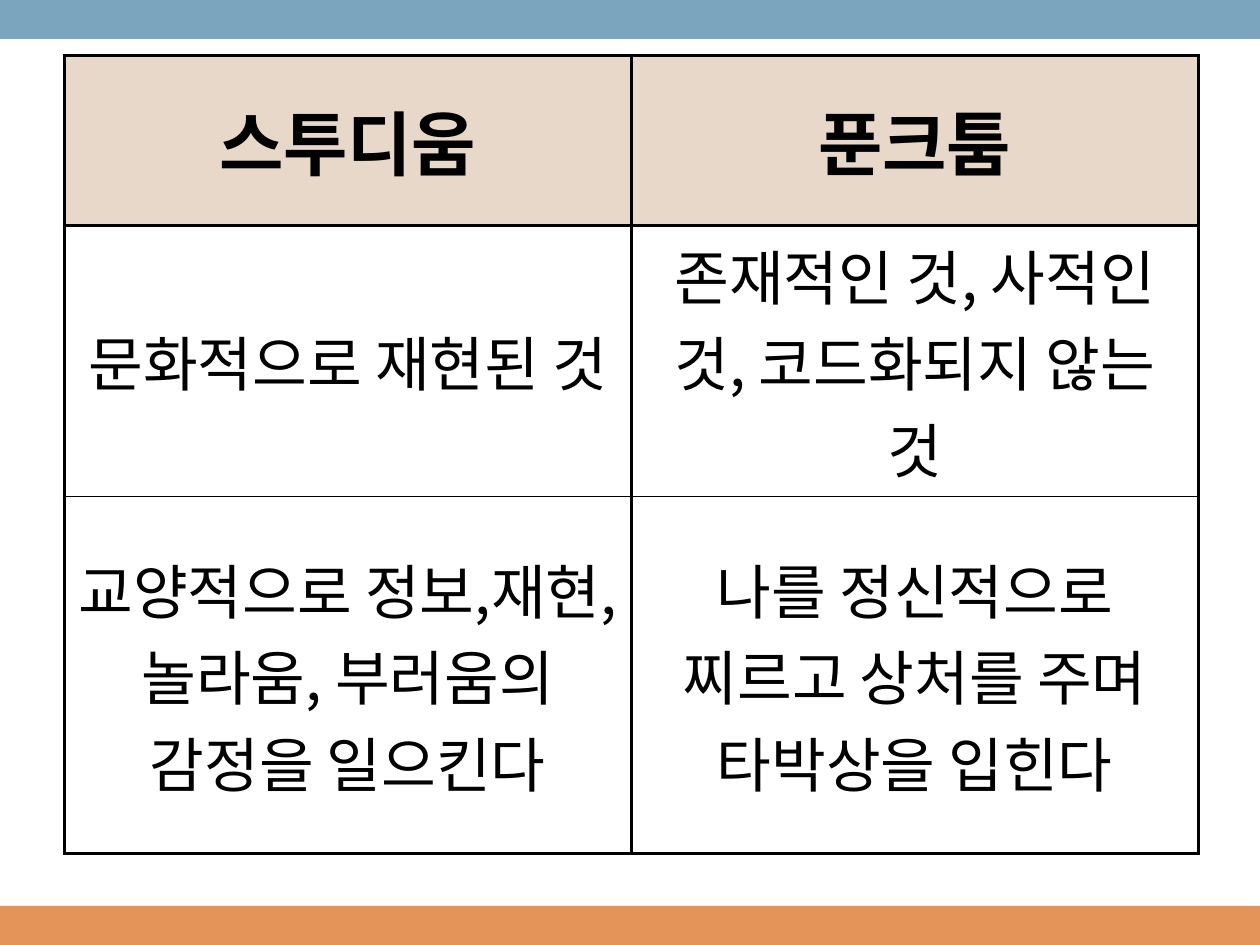
import dataclasses

import lxml.etree
import pptx
import pptx.dml.color
import pptx.enum.shapes
import pptx.enum.text
import pptx.oxml
import pptx.oxml.ns
import pptx.util

Pt = pptx.util.Pt
qn = pptx.oxml.ns.qn

COLORS = {
    "top_bar": "7BA5BE",
    "bottom_bar": "E49458",
    "header": "E8D8CA",
    "body": "FFFFFF",
    "ink": "000000",
}
FONT = "Noto Sans CJK KR"
SLIDE_WIDTH, SLIDE_HEIGHT = 720, 540
BAR_HEIGHT = 22.3
TABLE_LEFT, TABLE_TOP, TABLE_HEIGHT = 36.7, 31.7, 383.8
COLUMN_WIDTH = 324
THICK, THIN = 2.25, 1


@dataclasses.dataclass(frozen=True)
class Row:
    texts: tuple[str, str]
    height: float
    fill: str = "body"
    size: float = 34
    bold: bool = False
    top: float = THICK
    bottom: float = THICK


ROWS = (
    Row(("스투디움", "푼크툼"), 97.2, fill="header", size=40, bold=True),
    Row(("문화적으로 재현된 것", "존재적인 것, 사적인 것, 코드화되지 않는 것"),
        74.9, bottom=THIN),
    Row(("교양적으로 정보,재현,놀라움, 부러움의 감정을 일으킨다",
         "나를 정신적으로 찌르고 상처를 주며 타박상을 입힌다"),
        157, top=THIN),
)


def rgb(name: str) -> pptx.dml.color.RGBColor:
    return pptx.dml.color.RGBColor.from_string(COLORS[name])


def add_bar(slide, top: float, color: str) -> None:
    bar = slide.shapes.add_shape(
        pptx.enum.shapes.MSO_SHAPE.RECTANGLE,
        0, Pt(top), Pt(SLIDE_WIDTH), Pt(BAR_HEIGHT))
    bar.shadow.inherit = False
    bar.fill.solid()
    bar.fill.fore_color.rgb = rgb(color)
    bar.line.fill.background()


def set_borders(cell, row: Row) -> None:
    """Add the border lines; they must precede the cell fill in the XML."""
    properties = cell._tc.get_or_add_tcPr()
    widths = {"lnL": THICK, "lnR": THICK, "lnT": row.top, "lnB": row.bottom}
    for side, width in widths.items():
        line = lxml.etree.SubElement(properties, qn(f"a:{side}"), w=str(Pt(width)))
        fill = lxml.etree.SubElement(line, qn("a:solidFill"))
        lxml.etree.SubElement(fill, qn("a:srgbClr"), val=COLORS["ink"])


def style_paragraph(paragraph, row: Row) -> None:
    """Set the font, also for Korean script, and 20% space before."""
    paragraph.alignment = pptx.enum.text.PP_ALIGN.CENTER
    font = paragraph.font
    font.size = Pt(row.size)
    font.bold = row.bold
    font.color.rgb = rgb("ink")
    font.name = FONT
    lxml.etree.SubElement(font._element, qn("a:ea"), typeface=FONT)
    space_before = lxml.etree.Element(qn("a:spcBef"))
    lxml.etree.SubElement(space_before, qn("a:spcPct"), val="20000")
    paragraph._p.get_or_add_pPr().insert(0, space_before)


def fill_cell(cell, text: str, row: Row) -> None:
    set_borders(cell, row)
    cell.fill.solid()
    cell.fill.fore_color.rgb = rgb(row.fill)
    cell.vertical_anchor = pptx.enum.text.MSO_ANCHOR.MIDDLE
    cell.text = text
    style_paragraph(cell.text_frame.paragraphs[0], row)


def add_comparison(slide) -> None:
    frame = slide.shapes.add_table(
        len(ROWS), 2, Pt(TABLE_LEFT), Pt(TABLE_TOP),
        Pt(2 * COLUMN_WIDTH), Pt(TABLE_HEIGHT))
    comparison = frame.table
    comparison.horz_banding = False
    for column in comparison.columns:
        column.width = Pt(COLUMN_WIDTH)
    for row, table_row in zip(ROWS, comparison.rows):
        table_row.height = Pt(row.height)
        for cell, text in zip(table_row.cells, row.texts):
            fill_cell(cell, text, row)
    frame.height = Pt(TABLE_HEIGHT)


def main() -> None:
    presentation = pptx.Presentation()
    presentation.slide_width = Pt(SLIDE_WIDTH)
    presentation.slide_height = Pt(SLIDE_HEIGHT)
    slide = presentation.slides.add_slide(presentation.slide_layouts[6])
    add_bar(slide, SLIDE_HEIGHT - BAR_HEIGHT, "bottom_bar")
    add_bar(slide, 0, "top_bar")
    add_comparison(slide)
    presentation.save("out.pptx")


if __name__ == "__main__":
    main()
